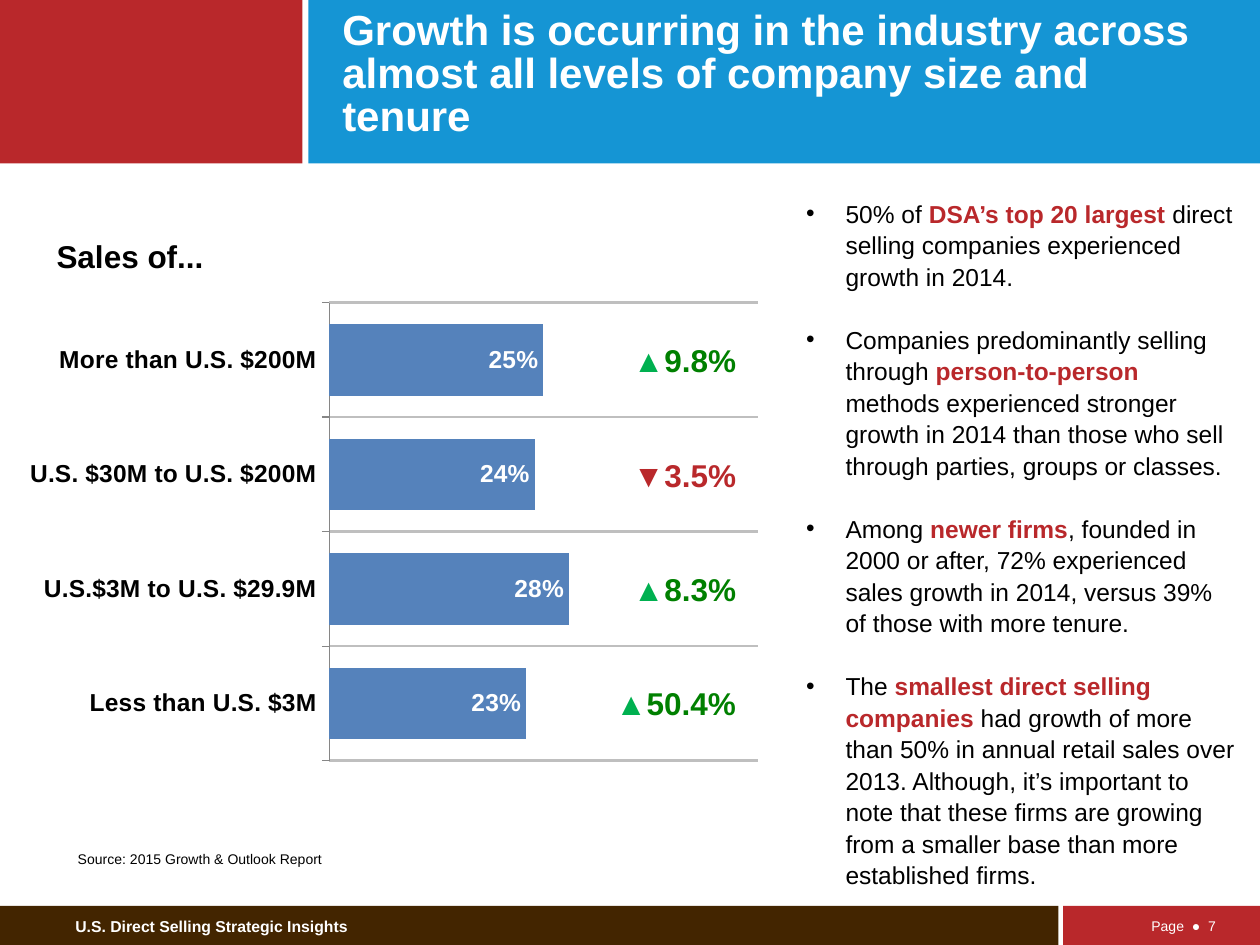
from lxml import etree
from pptx import Presentation
from pptx.chart.data import CategoryChartData
from pptx.dml.color import RGBColor
from pptx.enum.chart import XL_CHART_TYPE, XL_LABEL_POSITION, XL_TICK_MARK
from pptx.enum.shapes import MSO_SHAPE
from pptx.enum.text import MSO_ANCHOR, PP_ALIGN
from pptx.oxml import parse_xml
from pptx.oxml.ns import nsdecls, qn
from pptx.util import Pt

BAR = XL_CHART_TYPE.BAR_CLUSTERED
INSIDE_END = XL_LABEL_POSITION.INSIDE_END
TICK_OUT, TICK_NONE = XL_TICK_MARK.OUTSIDE, XL_TICK_MARK.NONE
RECTANGLE = MSO_SHAPE.RECTANGLE
TOP, MIDDLE, BOTTOM = MSO_ANCHOR.TOP, MSO_ANCHOR.MIDDLE, MSO_ANCHOR.BOTTOM
LEFT, RIGHT = PP_ALIGN.LEFT, PP_ALIGN.RIGHT

FONT = "Arial"
WHITE, BLACK, RED, BLUE = "FFFFFF", "000000", "B9282B", "1595D4"
BROWN, BAR_BLUE, GRID, AXIS = "432500", "5582BB", "BFBFBF", "868686"
ARROW_GREEN, GREEN = "00B050", "008000"


def rgb(value):
    return RGBColor.from_string(value)


def set_font(font, size, color, bold=False):
    font.name, font.size, font.bold = FONT, Pt(size), bold
    font.color.rgb = rgb(color)


class SlideBuilder:
    """Holds the current slide and its common style."""

    def __init__(self, slide):
        self.slide = slide

    def block(self, left, top, width, height, color):
        shape = self.slide.shapes.add_shape(
            RECTANGLE, Pt(left), Pt(top), Pt(width), Pt(height))
        shape.shadow.inherit = False
        shape.fill.solid()
        shape.fill.fore_color.rgb = rgb(color)
        shape.line.fill.background()

    def text(self, content, left, top, width, height, *, size, color=BLACK,
             bold=False, align=LEFT, anchor=TOP, wrap=True, spacing=None,
             gap=None, bullet_indent=None):
        """Add text; content is a string or paragraphs of (text, color, bold) runs."""
        box = self.slide.shapes.add_textbox(Pt(left), Pt(top), Pt(width), Pt(height))
        frame = box.text_frame
        frame.word_wrap, frame.vertical_anchor = wrap, anchor
        paragraphs = [[(content, color, bold)]] if isinstance(content, str) else content
        for index, runs in enumerate(paragraphs):
            paragraph = frame.add_paragraph() if index else frame.paragraphs[0]
            if bullet_indent:
                properties = paragraph._p.get_or_add_pPr()
                properties.set("marL", str(Pt(bullet_indent)))
                properties.set("indent", str(-Pt(bullet_indent)))
                etree.SubElement(properties, qn("a:buFont"), typeface=FONT)
                etree.SubElement(properties, qn("a:buChar"), char="•")
            paragraph.alignment = align
            if spacing:
                paragraph.line_spacing = spacing
            if gap and index:
                paragraph.space_before = Pt(gap)
            for words, run_color, run_bold in runs:
                run = paragraph.add_run()
                run.text = words
                set_font(run.font, size, run_color, run_bold)

    def bar_chart(self, categories, values, left, top, width, height, plot_area):
        data = CategoryChartData(number_format="0%")
        data.categories = categories
        data.add_series("Series 1", values)
        chart = self.slide.shapes.add_chart(
            BAR, Pt(left), Pt(top), Pt(width), Pt(height), data).chart
        chart.has_legend = chart.has_title = False
        set_font(chart.font, 14, BLACK, True)

        sizes = category_axis, value_axis = chart.category_axis, chart.value_axis
        for axis in sizes:
            axis.minor_tick_mark = TICK_NONE
        category_axis.major_tick_mark = TICK_OUT
        category_axis.format.line.color.rgb = rgb(AXIS)
        category_axis.has_major_gridlines = True
        grid = category_axis.major_gridlines.format.line
        grid.color.rgb, grid.width = rgb(GRID), Pt(1.5)
        value_axis.has_major_gridlines = False
        value_axis.minimum_scale, value_axis.maximum_scale = 0, 0.5
        value_axis.visible = False

        plot = chart.plots[0]
        plot.gap_width, plot.vary_by_categories = 60, False
        fill = plot.series[0].format.fill
        fill.solid()
        fill.fore_color.rgb = rgb(BAR_BLUE)
        plot.has_data_labels = True
        labels = plot.data_labels
        labels.show_value, labels.position = True, INSIDE_END
        labels.number_format, labels.number_format_is_linked = "0%", False
        set_font(labels.font, 14, WHITE, True)
        self.place_plot(chart, plot_area)

    @staticmethod
    def place_plot(chart, fractions):
        """Fix the inner plot area as x, y, w, h fractions of the chart."""
        modes = "".join(f'<c:{side}Mode val="edge"/>' for side in "xy")
        places = "".join(f'<c:{side} val="{part}"/>'
                         for side, part in zip("xywh", fractions))
        layout = parse_xml(
            f'<c:layout {nsdecls("c")}><c:manualLayout><c:layoutTarget val="inner"/>'
            f"{modes}{places}</c:manualLayout></c:layout>")
        area = chart._chartSpace.chart.plotArea
        for old in area.findall(qn("c:layout")):
            area.remove(old)
        area.insert(0, layout)


FINDINGS = [
    ("50% of ", "DSA’s top 20 largest ",
     "direct selling companies experienced growth in 2014."),
    ("Companies predominantly selling through ", "person-to-person ",
     "methods experienced stronger growth in 2014 than those who sell through "
     "parties, groups or classes."),
    ("Among ", "newer firms",
     ", founded in 2000 or after, 72% experienced sales growth in 2014, versus "
     "39% of those with more tenure."),
    ("The ", "smallest direct selling companies ",
     "had growth of more than 50% in annual retail sales over 2013. Although, "
     "it’s important to note that these firms are growing from a smaller base "
     "than more established firms."),
]
COMPANY_SHARES = {
    "Less than U.S. $3M": 0.23,
    "U.S.$3M to U.S. $29.9M": 0.28,
    "U.S. $30M to U.S. $200M": 0.24,
    "More than U.S. $200M": 0.25,
}
# Arrow, arrow colour, change, change colour and box width, from the top bar down
SALES_CHANGES = [
    ("▲", ARROW_GREEN, "9.8%", GREEN, 73.5),
    ("▼", RED, "3.5%", RED, 73.5),
    ("▲", ARROW_GREEN, "8.3%", GREEN, 73.5),
    ("▲", ARROW_GREEN, "50.4%", GREEN, 83.5),
]
CHANGE_RIGHT, CHANGE_TOP, CHANGE_PITCH = 427.7, 191.5, 65.3


def main():
    deck = Presentation()
    deck.slide_width, deck.slide_height = Pt(720), Pt(540)
    page = SlideBuilder(deck.slides.add_slide(deck.slide_layouts[6]))

    page.block(0, 517.7, 604.8, 22.3, BROWN)
    page.block(176.2, 0, 543.8, 93.4, BLUE)
    page.block(0, 0, 172.8, 93.4, RED)
    page.block(607.5, 517.7, 112.5, 22.3, RED)

    page.text("U.S. Direct Selling Strategic Insights", 36, 520.5, 238, 18,
              size=9, color=WHITE, bold=True, anchor=MIDDLE)
    page.text("Growth is occurring in the industry across almost all levels of "
              "company size and tenure", 188.5, 13.7, 513.5, 69.8, size=24,
              color=WHITE, bold=True, anchor=BOTTOM, spacing=0.85)
    page.text("Page  ●  7", 604.8, 520.5, 97.2, 17.3, size=8, color=WHITE,
              align=RIGHT, anchor=MIDDLE)
    page.text("Source: 2015 Growth & Outlook Report", 37.3, 482.4, 367, 17.3, size=8)
    page.text([[(before, BLACK, False), (key, RED, True), (after, BLACK, False)]
               for before, key, after in FINDINGS],
              453.6, 108.7, 259.2, 406.8, size=14, spacing=Pt(18), gap=18,
              bullet_indent=22.5)

    page.bar_chart(list(COMPANY_SHARES), list(COMPANY_SHARES.values()),
                   0, 145.4, 445, 313.2, (0.423, 0.088, 0.55, 0.836))
    page.text("Sales of...", 25.2, 131.8, 99.4, 29, size=18, bold=True, wrap=False)
    for row, (arrow, arrow_color, change, color, width) in enumerate(SALES_CHANGES):
        page.text([[(arrow, arrow_color, False), (change, color, True)]],
                  CHANGE_RIGHT - width, CHANGE_TOP + row * CHANGE_PITCH, width, 29,
                  size=18, align=RIGHT, wrap=False)

    deck.save("out.pptx")


if __name__ == "__main__":
    main()
